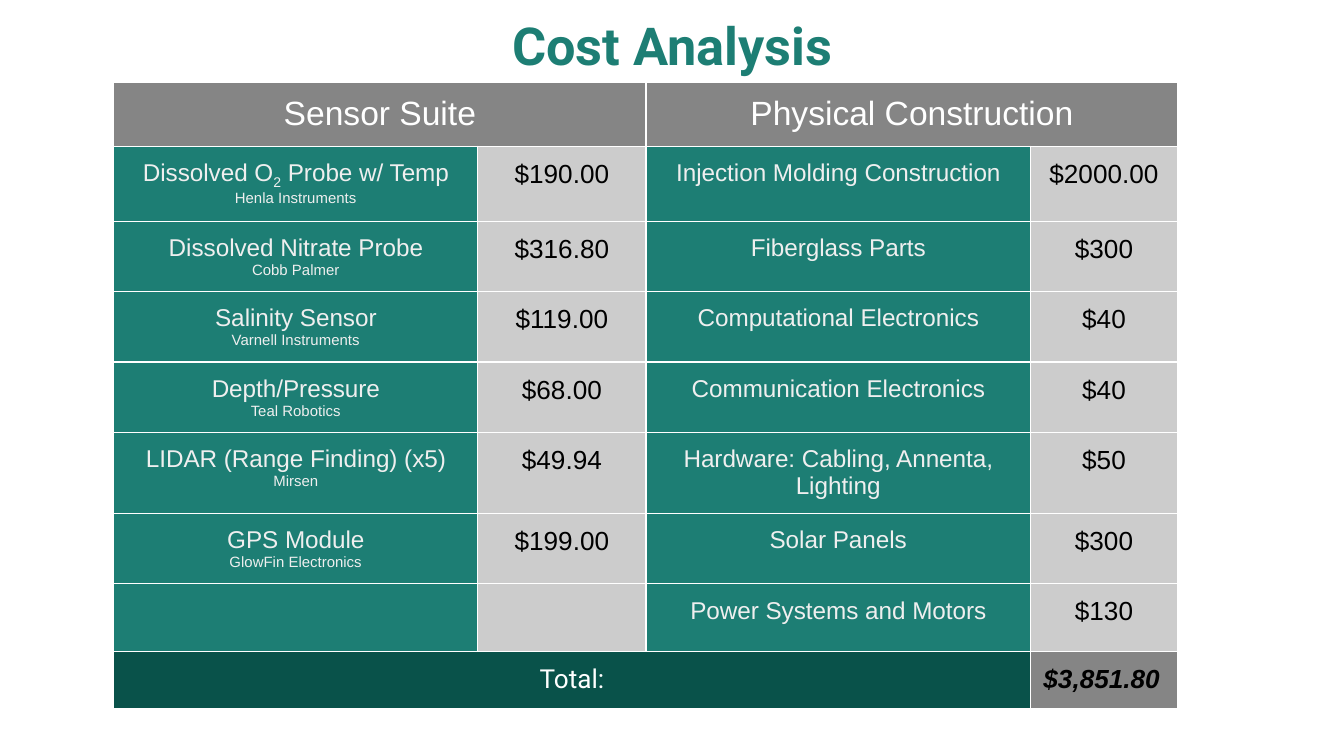
from lxml.etree import SubElement
from pptx import Presentation
from pptx.dml.color import RGBColor
from pptx.enum.text import MSO_ANCHOR, MSO_AUTO_SIZE, PP_ALIGN
from pptx.oxml.ns import qn
from pptx.util import Cm, Pt

COLORS = {
    "teal": "1D7E74",
    "dark_teal": "09524A",
    "gray": "858585",
    "light_gray": "CCCCCC",
    "off_white": "EFEFEF",
    "white": "FFFFFF",
    "black": "000000",
}
COLUMN_WIDTHS = [6.88, 3.18, 7.26, 2.79]
ROW_HEIGHTS = [1.2, 1.42, 1.33, 1.33, 1.33, 1.53, 1.33, 1.2, 1.09]
INSET = Cm(0.25)

# Sensor, supplier, sensor price, construction part, part price
COSTS = [
    ("Dissolved O2 Probe w/ Temp", "Henla Instruments", "$190.00",
     "Injection Molding Construction", "$2000.00"),
    ("Dissolved Nitrate Probe", "Cobb Palmer", "$316.80", "Fiberglass Parts", "$300"),
    ("Salinity Sensor", "Varnell Instruments", "$119.00", "Computational Electronics", "$40"),
    ("Depth/Pressure", "Teal Robotics", "$68.00", "Communication Electronics", "$40"),
    ("LIDAR (Range Finding) (x5)", "Mirsen", "$49.94",
     "Hardware: Cabling, Annenta, Lighting", "$50"),
    ("GPS Module", "GlowFin Electronics", "$199.00", "Solar Panels", "$300"),
    ("", "", "", "Power Systems and Motors", "$130"),
]


def format_run(run, size, color, font="Arial"):
    run.font.size = Pt(size)
    run.font.name = font
    run.font.color.rgb = RGBColor.from_string(COLORS[color])


def style_cell(cell, fill):
    """Give a cell its insets, white borders and fill."""
    cell.margin_left = cell.margin_right = INSET
    cell.margin_top = cell.margin_bottom = INSET
    properties = cell._tc.get_or_add_tcPr()
    for side in ("lnL", "lnR", "lnT", "lnB"):
        line = SubElement(properties, qn(f"a:{side}"), w=str(Pt(0.75)))
        solid = SubElement(line, qn("a:solidFill"))
        SubElement(solid, qn("a:srgbClr"), val=COLORS["white"])
    cell.fill.solid()
    cell.fill.fore_color.rgb = RGBColor.from_string(COLORS[fill])


deck = Presentation()
deck.slide_width, deck.slide_height = Cm(25.4), Cm(14.29)
page = deck.slides.add_slide(deck.slide_layouts[5])

title = page.shapes.title
title.left, title.top, title.width, title.height = Cm(0.87), Cm(0), Cm(23.66), Cm(1.6)
frame = title.text_frame
frame.text = "Cost Analysis"
frame.auto_size = MSO_AUTO_SIZE.NONE
frame.vertical_anchor = MSO_ANCHOR.TOP
frame.margin_left = frame.margin_right = INSET
frame.margin_top = frame.margin_bottom = INSET
frame.paragraphs[0].alignment = PP_ALIGN.CENTER
format_run(frame.paragraphs[0].runs[0], 28, "teal", "Roboto")
frame.paragraphs[0].runs[0].font.bold = True

table = page.shapes.add_table(
    len(ROW_HEIGHTS), len(COLUMN_WIDTHS), Cm(2.15), Cm(1.55),
    Cm(sum(COLUMN_WIDTHS)), Cm(sum(ROW_HEIGHTS))).table
table.first_row = table.horz_banding = False
for column, width in zip(table.columns, COLUMN_WIDTHS):
    column.width = Cm(width)
for row, height in zip(table.rows, ROW_HEIGHTS):
    row.height = Cm(height)

last_row = len(ROW_HEIGHTS) - 1
row_fills = {0: ["gray"] * 4, last_row: ["dark_teal"] * 3 + ["gray"]}
for row_index in range(len(ROW_HEIGHTS)):
    fills = row_fills.get(row_index, ["teal", "light_gray"] * 2)
    for column_index, fill in enumerate(fills):
        style_cell(table.cell(row_index, column_index), fill)

for column_index, heading in ((0, "Sensor Suite"), (2, "Physical Construction")):
    cell = table.cell(0, column_index)
    cell.merge(table.cell(0, column_index + 1))
    cell.text_frame.text = heading
    para = cell.text_frame.paragraphs[0]
    para.alignment = PP_ALIGN.CENTER
    format_run(para.runs[0], 18, "white")

for row_index, (sensor, supplier, price, part, part_price) in enumerate(COSTS, start=1):
    for column_index, text in enumerate((sensor, price, part, part_price)):
        if not text:
            continue
        size, color = (14, "black") if column_index % 2 else (13, "off_white")
        frame = table.cell(row_index, column_index).text_frame
        para = frame.paragraphs[0]
        para.alignment = PP_ALIGN.CENTER
        before, subscript, after = text.partition("2") if "O2" in text else (text, "", "")
        for piece in filter(None, (before, subscript, after)):
            run = para.add_run()
            run.text = piece
            format_run(run, size, color)
            if piece == subscript:
                run._r.get_or_add_rPr().set("baseline", "-25000")
        if column_index == 0:
            para = frame.add_paragraph()
            para.text = supplier
            para.alignment = PP_ALIGN.CENTER
            format_run(para.runs[0], 8, color)

total_label = table.cell(last_row, 0)
total_label.merge(table.cell(last_row, 2))
total_label.text_frame.text = "Total:"
para = total_label.text_frame.paragraphs[0]
para.alignment = PP_ALIGN.CENTER
format_run(para.runs[0], 14, "white", "Roboto")

total = table.cell(last_row, 3)
total.text_frame.text = "$3,851.80"
run = total.text_frame.paragraphs[0].runs[0]
format_run(run, 14, "black")
run.font.bold = run.font.italic = True

deck.save("out.pptx")
